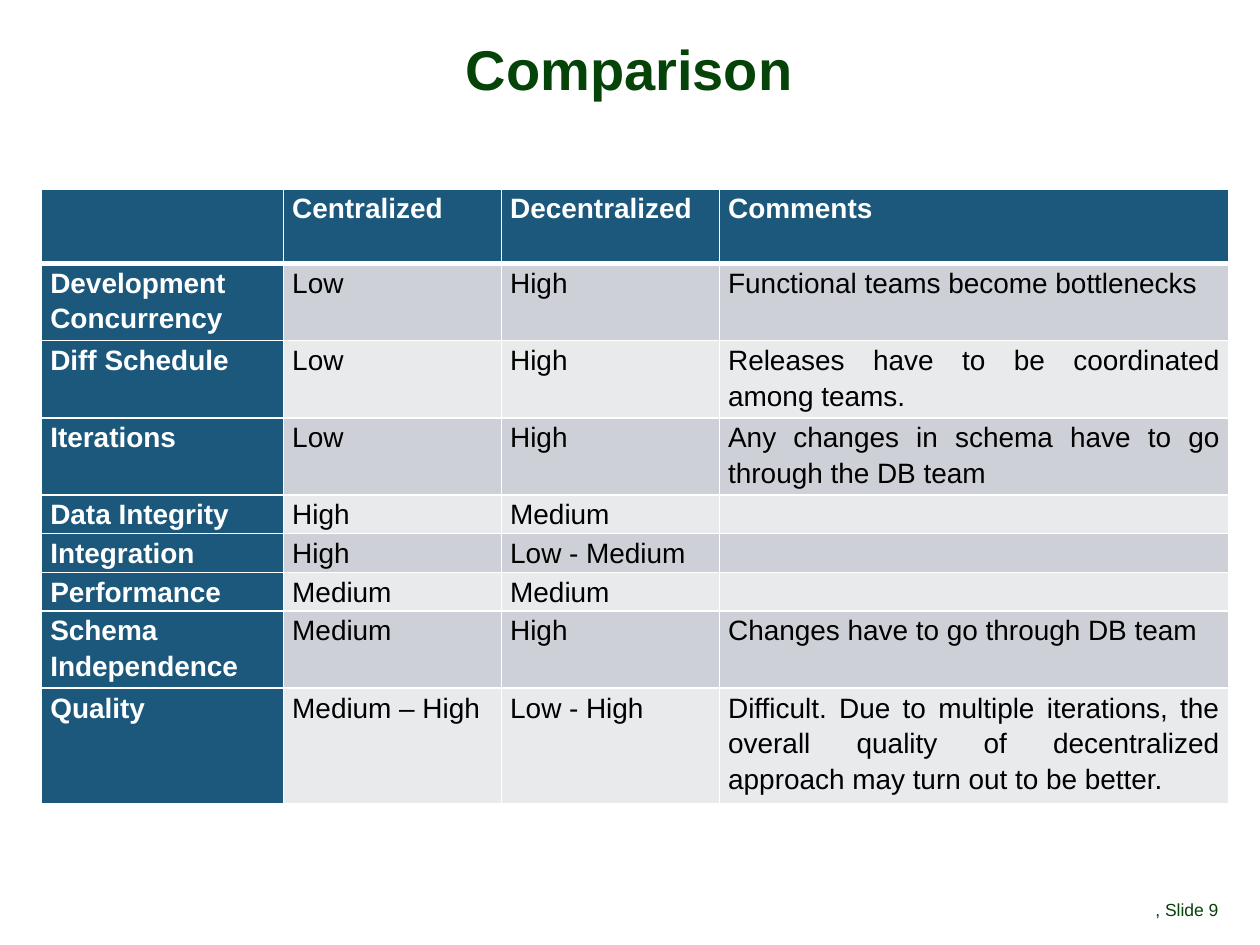
from lxml.etree import SubElement
from pptx import Presentation
from pptx.dml.color import RGBColor
from pptx.enum.text import MSO_ANCHOR as Anchor, MSO_AUTO_SIZE as AutoSize, PP_ALIGN as Align
from pptx.oxml.ns import qn
from pptx.util import Inches, Pt

FONT = "Arial"
GREEN, BLUE, WHITE, BLACK = "064308", "1B587C", "FFFFFF", "000000"
BANDS = ("CDD1D7", "E8EAEC")

COLUMN_WIDTHS = (1.92, 1.73, 1.73, 4.04)
ONE_LINE, TWO_LINES, THREE_LINES = 0.28, 0.59, 0.89
COMPARISON = [
    (TWO_LINES, "", "Centralized", "Decentralized", "Comments"),
    (TWO_LINES, "Development Concurrency", "Low", "High",
     "Functional teams become bottlenecks"),
    (TWO_LINES, "Diff Schedule", "Low", "High",
     "Releases have to be coordinated among teams."),
    (TWO_LINES, "Iterations", "Low", "High",
     "Any changes in schema have to go through the DB team"),
    (ONE_LINE, "Data Integrity", "High", "Medium", ""),
    (ONE_LINE, "Integration", "High", "Low - Medium", ""),
    (ONE_LINE, "Performance", "Medium", "Medium", ""),
    (TWO_LINES, "Schema Independence", "Medium", "High",
     "Changes have to go through DB team"),
    (THREE_LINES, "Quality", "Medium – High", "Low - High",
     "Difficult. Due to multiple iterations, the overall quality of "
     "decentralized approach may turn out to be better."),
]


def color(value):
    return RGBColor.from_string(value)


class SlideBuilder:
    def __init__(self, slide):
        self.slide = slide

    def add_text(self, paragraph, text, size, ink, bold=False):
        run = paragraph.add_run()
        run.text = text
        run.font.name = FONT
        run.font.size = Pt(size)
        run.font.bold = bold
        run.font.color.rgb = color(ink)

    def frame(self, shape, anchor, side, edge):
        frame = shape.text_frame
        frame.word_wrap = True
        frame.vertical_anchor = anchor
        frame.margin_left = frame.margin_right = Inches(side)
        frame.margin_top = frame.margin_bottom = Inches(edge)
        return frame

    def title(self, text, left, top, width, height):
        heading = self.slide.shapes.title
        heading.left, heading.top = Inches(left), Inches(top)
        heading.width, heading.height = Inches(width), Inches(height)
        frame = self.frame(heading, Anchor.MIDDLE, 0.06, 0.02)
        frame.auto_size = AutoSize.SHAPE_TO_FIT_TEXT
        line = frame.paragraphs[0]
        line.alignment = Align.CENTER
        line.line_spacing = 0.88
        self.add_text(line, text, 32, GREEN, bold=True)

    def footer(self, text, left, top, width, height):
        box = self.slide.shapes.add_textbox(
            Inches(left), Inches(top), Inches(width), Inches(height))
        line = self.frame(box, Anchor.BOTTOM, 0, 0.05).paragraphs[0]
        line.line_spacing = 0.9
        self.add_text(line, text, 10, GREEN)

    def borders(self, cell, top, bottom):
        properties = cell._tc.get_or_add_tcPr()
        for side, points in (("L", 1), ("R", 1), ("T", top), ("B", bottom)):
            border = SubElement(properties, qn(f"a:ln{side}"), w=str(Pt(points)))
            fill = SubElement(border, qn("a:solidFill"))
            SubElement(fill, qn("a:srgbClr"), val=WHITE)

    def cell(self, cell, text, row, column):
        heading = row == 0 or column == 0
        self.borders(cell, top=3 if row == 1 else 1, bottom=3 if row == 0 else 1)
        cell.fill.solid()
        cell.fill.fore_color.rgb = color(BLUE if heading else BANDS[(row - 1) % 2])
        cell.margin_left = cell.margin_right = Inches(0.07)
        cell.margin_top = cell.margin_bottom = 0
        line = cell.text_frame.paragraphs[0]
        line.alignment = Align.JUSTIFY
        line.line_spacing = 1.15
        if text:
            self.add_text(line, text, 16, WHITE if heading else BLACK, heading)
        else:
            # Keeps an empty cell from stretching its row
            SubElement(line._p, qn("a:endParaRPr"), sz="1600")

    def table(self, rows, widths, left, top):
        height = sum(row[0] for row in rows)
        grid = self.slide.shapes.add_table(
            len(rows), len(widths), Inches(left), Inches(top),
            Inches(sum(widths)), Inches(height)).table
        for column, width in enumerate(widths):
            grid.columns[column].width = Inches(width)
        for r, (row_height, *texts) in enumerate(rows):
            grid.rows[r].height = Inches(row_height)
            for c, text in enumerate(texts):
                self.cell(grid.cell(r, c), text, r, c)


def main():
    deck = Presentation()
    deck.slide_width, deck.slide_height = Inches(10), Inches(7.5)
    builder = SlideBuilder(deck.slides.add_slide(deck.slide_layouts[5]))

    # Comparison of the two approaches
    builder.table(COMPARISON, COLUMN_WIDTHS, 0.33, 1.5)

    # Heading and slide number
    builder.title("Comparison", 0.08, 0.31, 9.83, 0.53)
    builder.footer(", Slide 9", 9.17, 6.95, 0.83, 0.4)

    deck.save("out.pptx")


if __name__ == "__main__":
    main()
